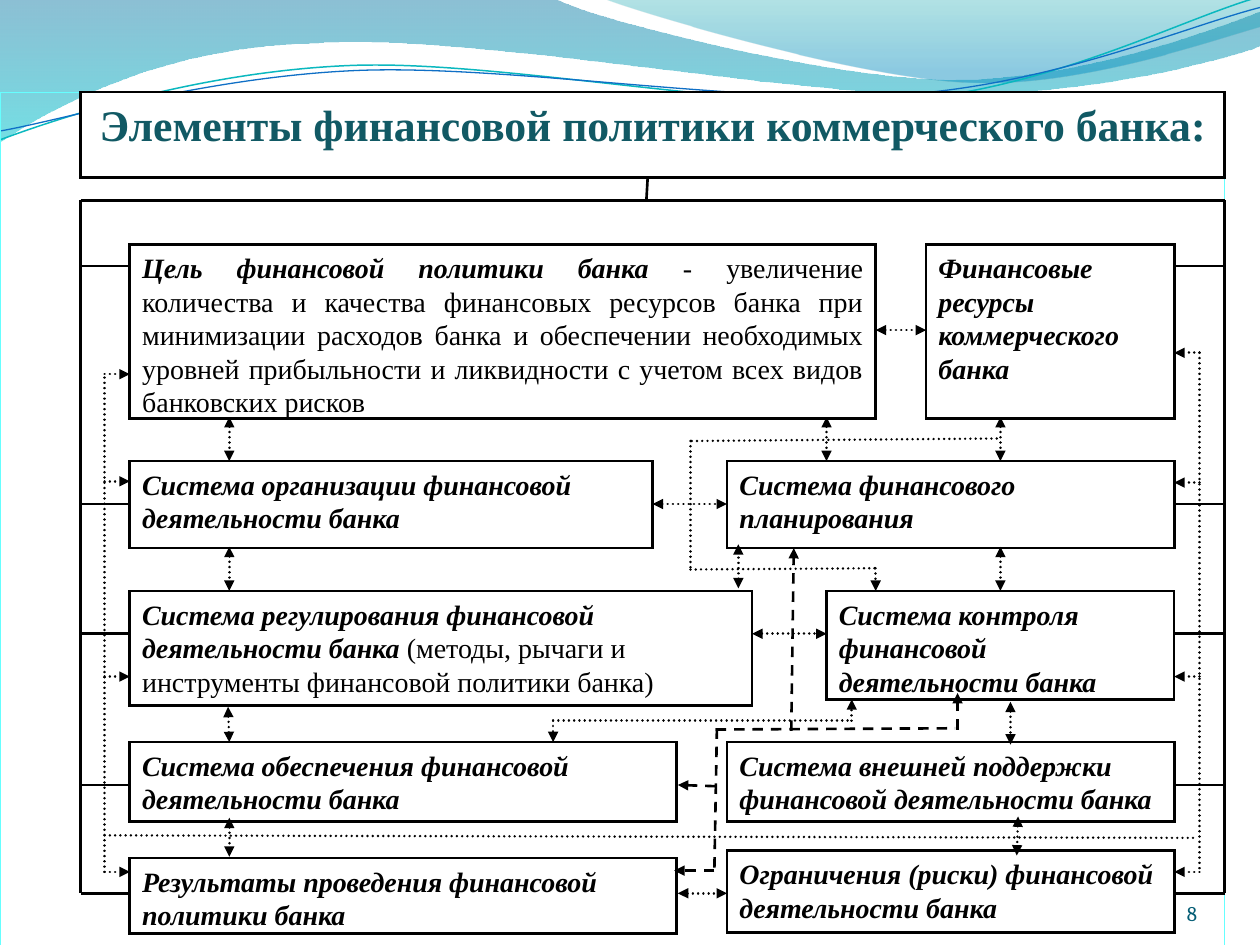
import math

import pptx
import pptx.util
import pptx.dml.color
import pptx.enum.dml
import pptx.enum.shapes
import pptx.enum.text
import pptx.oxml
from lxml import etree

Inches = pptx.util.Inches
Pt = pptx.util.Pt
RGBColor = pptx.dml.color.RGBColor
ALIGN = pptx.enum.text.PP_ALIGN
ANCHOR = pptx.enum.text.MSO_ANCHOR
DASH = pptx.enum.dml.MSO_LINE
RECT = pptx.enum.shapes.MSO_SHAPE.RECTANGLE
STRAIGHT = pptx.enum.shapes.MSO_CONNECTOR.STRAIGHT
qn = pptx.oxml.ns.qn

BLACK = RGBColor(0x00, 0x00, 0x00)
WHITE = RGBColor(0xFF, 0xFF, 0xFF)
TITLE = RGBColor(0x11, 0x59, 0x64)
NUMBER = RGBColor(0x04, 0x5D, 0x75)
FRAME = RGBColor(0x66, 0xFF, 0xFF)
TEAL = RGBColor(0x0A, 0xB8, 0xBF)
BLUE = RGBColor(0x0F, 0x6F, 0xC6)
WAVE_TOP = RGBColor(0x00, 0x74, 0xA1)
WAVE_BOTTOM = RGBColor(0x00, 0xC6, 0xCF)
CREST_TOP = RGBColor(0x00, 0xA1, 0xA9)
CREST_BOTTOM = RGBColor(0x00, 0x8B, 0xBF)

LEFT, RIGHT = 0.64, 9.72          # outer frame
BOX_LEFT, BOX_RIGHT = 1.03, 9.32  # block edges
DOT_LEFT, DOT_RIGHT = 0.83, 9.52  # dotted feedback loop
TILT = -2.7                       # swoosh rotation in degrees

BOLD = {"bold": True, "italic": True}
PLAIN = {"bold": False, "italic": False}

# left, top, width, height, bold italic text, plain text, alignment
BLOCKS = [
    (BOX_LEFT, 1.94, 5.92, 1.38, "Цель финансовой политики банка",
     " - увеличение количества и качества финансовых ресурсов банка при "
     "минимизации расходов банка и обеспечении необходимых уровней "
     "прибыльности и ликвидности с учетом всех видов банковских рисков", ALIGN.JUSTIFY),
    (7.35, 1.94, 1.97, 1.38, "Финансовые ресурсы коммерческого банка", "", ALIGN.LEFT),
    (BOX_LEFT, 3.66, 4.15, 0.69, "Система организации финансовой деятельности банка", "", ALIGN.LEFT),
    (5.77, 3.66, 3.55, 0.69, "Система финансового планирования", "", ALIGN.LEFT),
    (BOX_LEFT, 4.69, 4.94, 0.91, "Система регулирования финансовой деятельности банка",
     " (методы, рычаги и инструменты финансовой политики банка)", ALIGN.LEFT),
    (6.56, 4.69, 2.76, 0.86, "Система контроля финансовой деятельности банка", "", ALIGN.LEFT),
    (BOX_LEFT, 5.89, 4.34, 0.63, "Система обеспечения финансовой деятельности банка", "", ALIGN.LEFT),
    (5.77, 5.89, 3.55, 0.63, "Система внешней поддержки финансовой деятельности банка", "", ALIGN.LEFT),
    (BOX_LEFT, 6.81, 4.34, 0.6, "Результаты проведения финансовой политики банка", "", ALIGN.LEFT),
    (5.77, 6.75, 3.55, 0.65, "Ограничения (риски) финансовой деятельности банка", "", ALIGN.LEFT),
]

# x1, y1, x2, y2
TWO_WAY = [
    (6.95, 2.62, 7.35, 2.62), (5.18, 4, 5.77, 4), (5.97, 5.03, 6.56, 5.03),
    (5.38, 7.09, 5.77, 7.09), (1.82, 3.31, 1.82, 3.66), (6.56, 3.31, 6.56, 3.66),
    (7.94, 3.31, 7.94, 3.66), (1.82, 4.34, 1.82, 4.69), (7.94, 4.34, 7.94, 4.69),
    (5.86, 4.67, 5.86, 4.32), (1.81, 5.61, 1.82, 5.89), (8.02, 5.57, 8.02, 5.91),
    (1.82, 6.49, 1.82, 6.8), (8.08, 6.48, 8.07, 6.79),
]
DOTTED = [
    (DOT_LEFT, 6.92, DOT_LEFT, 2.97), (DOT_RIGHT, 2.8, DOT_RIGHT, 6.92),
    (DOT_LEFT, 6.63, 9.51, 6.65), (5.49, 3.5, 7.94, 3.48), (5.48, 3.5, 5.48, 4.53),
    (5.48, 4.52, 6.95, 4.51), (4.39, 5.72, 6.76, 5.72),
]
DOTTED_ARROWS = [
    (6.95, 4.51, 6.95, 4.69), (4.39, 5.72, 4.39, 5.89), (6.76, 5.72, 6.76, 5.55),
    *[(DOT_LEFT, y, BOX_LEFT, y) for y in (2.97, 3.82, 5.37, 6.92)],
    *[(DOT_RIGHT, y, BOX_RIGHT, y) for y in (2.8, 3.83, 5.37, 6.92)],
]
DASHED = [(5.69, 5.78, 5.67, 6.9), (5.68, 5.79, 7.58, 5.78)]
DASHED_ARROWS = [
    (5.67, 6.91, 5.35, 6.91), (5.68, 6.24, 5.38, 6.23),
    (7.6, 5.79, 7.6, 5.5), (6.28, 5.8, 6.3, 4.35),
]


def add_path(slide, start, segments, close):
    """Freeform whose six-number segments are cubic curves, two-number ones straight."""
    points = [(Inches(seg[i]), Inches(seg[i + 1])) for seg in segments for i in range(0, len(seg), 2)]
    builder = slide.shapes.build_freeform(*map(Inches, start), scale=1.0)
    builder.add_line_segments(points, close=close)
    s = builder.convert_to_shape()
    s.shadow.inherit = False
    corners = iter(list(s._element.spPr.iter(qn("a:lnTo"))))
    for seg in segments:
        first = next(corners)
        if len(seg) == 6:
            first.tag = qn("a:cubicBezTo")
            for _ in range(2):
                extra = next(corners)
                first.append(extra[0])
                extra.getparent().remove(extra)
    return s


def add_wave(slide, start, segments, stops):
    """Closed shape with a translucent gradient running downwards."""
    s = add_path(slide, start, segments, True)
    s.line.fill.background()
    s.fill.gradient()
    s.fill.gradient_angle = 270
    for stop, (position, color, _) in zip(s.fill.gradient_stops, stops):
        stop.position = position
        stop.color.rgb = color
    for clr, (_, _, opacity) in zip(s._element.spPr.iter(qn("a:srgbClr")), stops):
        etree.SubElement(clr, qn("a:alpha"), val=str(opacity * 1000))


def add_swoosh(slide, center, start, segments, color, width):
    """Open curve, drawn level and then tilted about its center."""
    cos, sin = math.cos(math.radians(-TILT)), math.sin(math.radians(-TILT))

    def level(seg):
        flat = []
        for x, y in zip(seg[::2], seg[1::2]):
            dx, dy = x - center[0], y - center[1]
            flat += [center[0] + dx * cos - dy * sin, center[1] + dx * sin + dy * cos]
        return flat

    s = add_path(slide, level(start), [level(seg) for seg in segments], False)
    s.rotation = TILT
    s.fill.background()
    s.line.color.rgb = color
    s.line.width = Pt(width)


def add_run(p, text, size, color=BLACK, name="Times New Roman", **style):
    r = p.add_run()
    r.text = text
    r.font.color.rgb = color
    for key, value in {"size": Pt(size), "name": name, **style}.items():
        setattr(r.font, key, value)


def add_box(slide, left, top, width, height, fill=WHITE, line=BLACK, weight=1.5):
    """Rectangle with sharp corners; returns its first paragraph."""
    s = slide.shapes.add_shape(RECT, *map(Inches, (left, top, width, height)))
    s.shadow.inherit = False
    if fill is None:
        s.fill.background()
    else:
        s.fill.solid()
        s.fill.fore_color.rgb = fill
    s.line.color.rgb = line
    s.line.width = Pt(weight)
    etree.SubElement(s._element.spPr.find(qn("a:ln")), qn("a:miter"), lim="800000")
    s.text_frame.vertical_anchor = ANCHOR.TOP
    return s.text_frame.paragraphs[0]


def add_lines(slide, lines, dash=None, ends=()):
    for line in lines:
        s = slide.shapes.add_connector(STRAIGHT, *map(Inches, line))
        s.line.color.rgb = BLACK
        s.line.width = Pt(1.5)
        if dash:
            s.line.dash_style = dash
        ln = s._element.spPr.find(qn("a:ln"))
        if dash == DASH.ROUND_DOT:
            ln.set("cap", "rnd")
        for end in ends:
            etree.SubElement(ln, qn(f"a:{end}"), type="triangle")
        etree.SubElement(s._element.spPr, qn("a:effectLst"))


def add_background(slide):
    add_wave(slide, (0, 0), [
        (4.4, -0.01), (4.76, 0.17, 6.64, 0.63, 7.58, 0.63),
        (8.53, 0.63, 9.58, 0.26, 10, 0.09), (10.01, 0.36),
        (9.83, 0.44, 8.7, 0.76, 7.46, 0.75), (6.22, 0.75, 3.82, 0.28, 2.57, 0.34),
        (1.29, 0.36, 0.46, 0.83, -0.01, 1.13), (0, 0)],
        [(0, WAVE_TOP, 45), (1, WAVE_BOTTOM, 55)])
    add_wave(slide, (4.79, -0.01), [
        (5.09, 0.11, 6.82, 0.62, 7.69, 0.65),
        (8.56, 0.69, 9.61, 0.32, 10, 0.21), (10, 0), (4.79, -0.01)],
        [(0, CREST_TOP, 30), (0.8, CREST_BOTTOM, 45)])
    add_swoosh(slide, (4.99, 0.58), (0, 1.11), [
        (0.48, 0.93, 1.58, 0.57, 2.77, 0.52), (3.95, 0.47, 5.93, 0.89, 7.13, 0.8),
        (8.33, 0.71, 9.38, 0.15, 9.98, -0.02)], TEAL, 0.85)
    add_swoosh(slide, (5, 0.59), (0, 1.04), [
        (0.47, 0.96, 1.64, 0.61, 2.83, 0.56), (4.03, 0.51, 5.97, 0.84, 7.17, 0.75),
        (8.36, 0.67, 9.41, 0.21, 10, 0.06)], BLUE, 0.75)


def add_blocks(slide):
    for *box, bold, plain, alignment in BLOCKS:
        p = add_box(slide, *box)
        p.alignment = alignment
        add_run(p, bold, 16, **BOLD)
        if plain:
            add_run(p, plain, 16, **PLAIN)


def add_page_number(slide):
    tf = slide.shapes.add_textbox(*map(Inches, (8.67, 6.95, 0.83, 0.4))).text_frame
    margins = dict.fromkeys(("margin_left", "margin_top", "margin_right", "margin_bottom"), 0)
    for key, value in {**margins, "word_wrap": True, "vertical_anchor": ANCHOR.BOTTOM}.items():
        setattr(tf, key, value)
    tf.paragraphs[0].alignment = ALIGN.RIGHT
    add_run(tf.paragraphs[0], "8", 12, NUMBER, "Cambria")


def main():
    prs = pptx.Presentation()
    prs.slide_width, prs.slide_height = Inches(10), Inches(7.5)
    slide = prs.slides.add_slide(prs.slide_layouts[6])
    add_background(slide)
    add_box(slide, 0, 0.73, RIGHT, 6.77, None, FRAME, 0.25)
    p = add_box(slide, LEFT, 0.73, RIGHT - LEFT, 0.68)
    p.alignment = ALIGN.CENTER
    add_run(p, "Элементы финансовой политики коммерческого банка:", 25, TITLE, bold=True)
    add_blocks(slide)
    add_lines(slide, [(5.14, 1.42, 5.13, 1.59), (LEFT, 1.59, RIGHT, 1.59)])
    for frame, edge in ((LEFT, BOX_LEFT), (RIGHT, BOX_RIGHT)):
        add_lines(slide, [(frame, 1.59, frame, 7.09)])
        add_lines(slide, [(frame, y, edge, y) for y in (2.11, 4, 5.03, 6.23, 7.09)])
    add_lines(slide, DOTTED, DASH.ROUND_DOT)
    add_lines(slide, DOTTED_ARROWS, DASH.ROUND_DOT, ["tailEnd"])
    add_lines(slide, TWO_WAY, DASH.ROUND_DOT, ["headEnd", "tailEnd"])
    add_lines(slide, DASHED, DASH.DASH)
    add_lines(slide, DASHED_ARROWS, DASH.DASH, ["tailEnd"])
    add_page_number(slide)
    prs.save("out.pptx")


if __name__ == "__main__":
    main()
